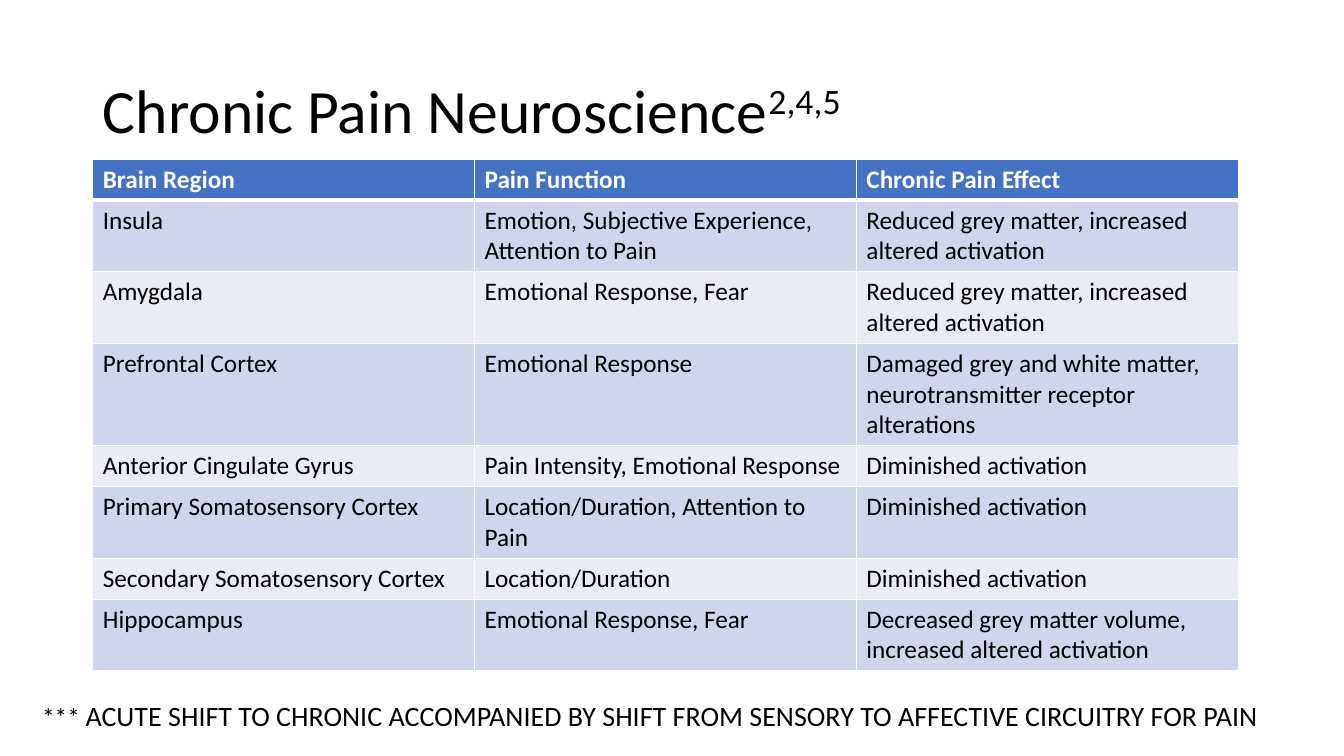
import pptx
import pptx.util
import pptx.dml.color
import pptx.enum.text
import pptx.oxml
import pptx.oxml.ns
from pptx.util import Inches

RGBColor = pptx.dml.color.RGBColor
BLACK = RGBColor(0x00, 0x00, 0x00)
WHITE = RGBColor(0xFF, 0xFF, 0xFF)
BLUE = RGBColor(0x44, 0x72, 0xC4)
BAND_DARK = RGBColor(0xCF, 0xD5, 0xEA)
BAND_LIGHT = RGBColor(0xE9, 0xEB, 0xF5)

ROWS = [
    ("Brain Region", "Pain Function", "Chronic Pain Effect"),
    ("Insula", "Emotion, Subjective Experience, Attention to Pain",
     "Reduced grey matter, increased altered activation"),
    ("Amygdala", "Emotional Response, Fear",
     "Reduced grey matter, increased altered activation"),
    ("Prefrontal Cortex", "Emotional Response",
     "Damaged grey and white matter, neurotransmitter receptor alterations"),
    ("Anterior Cingulate Gyrus", "Pain Intensity, Emotional Response",
     "Diminished activation"),
    ("Primary Somatosensory Cortex", "Location/Duration, Attention to Pain",
     "Diminished activation"),
    ("Secondary Somatosensory Cortex", "Location/Duration",
     "Diminished activation"),
    ("Hippocampus", "Emotional Response, Fear",
     "Decreased grey matter volume, increased altered activation"),
]
ROW_HEIGHTS = [0.38, 0.67, 0.67, 0.95, 0.38, 0.67, 0.38, 0.67]


class SlideBuilder:
    font = "Calibri"

    def __init__(self, prs):
        self.s = prs.slides.add_slide(prs.slide_layouts[5])

    def run(self, p, text, size, color=BLACK, bold=False):
        r = p.add_run()
        r.text = text
        r.font.color.rgb = color
        formats = {"name": self.font, "size": pptx.util.Pt(size), "bold": bold}
        for name, value in formats.items():
            setattr(r.font, name, value)
        return r

    def title(self, box, text, superscript, size):
        sp = self.s.shapes.title
        for name, value in zip(("left", "top", "width", "height"), box):
            setattr(sp, name, Inches(value))
        tf = sp.text_frame
        formats = {"word_wrap": True,
                   "auto_size": pptx.enum.text.MSO_AUTO_SIZE.NONE,
                   "vertical_anchor": pptx.enum.text.MSO_ANCHOR.MIDDLE}
        for name, value in formats.items():
            setattr(tf, name, value)
        p = tf.paragraphs[0]
        p.alignment = pptx.enum.text.PP_ALIGN.LEFT
        p.line_spacing = 0.9
        self.run(p, text, size)
        r = self.run(p, superscript, size)
        r.font._element.set("baseline", "30000")

    def text(self, box, runs):
        sp = self.s.shapes.add_textbox(*map(Inches, box))
        tf = sp.text_frame
        tf.word_wrap = True
        tf.auto_size = pptx.enum.text.MSO_AUTO_SIZE.SHAPE_TO_FIT_TEXT
        for text, size in runs:
            self.run(tf.paragraphs[0], text, size)

    def borders(self, cell, color, widths):
        tcPr = cell._tc.get_or_add_tcPr()
        for i, (side, width) in enumerate(widths.items()):
            # Border lines come before the fill in the cell properties
            tcPr.insert(i, pptx.oxml.parse_xml(
                f'<a:ln{side} {pptx.oxml.ns.nsdecls("a")} w="{pptx.util.Pt(width)}">'
                f'<a:solidFill><a:srgbClr val="{color}"/></a:solidFill></a:ln{side}>'))

    def table(self, box, rows, heights, size):
        table = self.s.shapes.add_table(
            len(rows), len(rows[0]), *map(Inches, box)).table
        for column in table.columns:
            column.width = Inches(box[2] / len(rows[0]))
        for i, (row, height) in enumerate(zip(rows, heights)):
            table.rows[i].height = Inches(height)
            header = i == 0
            fill = BLUE if header else BAND_DARK if i % 2 else BAND_LIGHT
            for j, text in enumerate(row):
                cell = table.cell(i, j)
                cell.fill.solid()
                cell.fill.fore_color.rgb = fill
                self.run(cell.text_frame.paragraphs[0], text, size,
                         WHITE if header else BLACK, header)
                self.borders(cell, WHITE, {"L": 1, "R": 1,
                                           "T": 3 if i == 1 else 1,
                                           "B": 3 if header else 1})


def main():
    prs = pptx.Presentation()
    prs.slide_width, prs.slide_height = Inches(13.33), Inches(7.5)
    slide = SlideBuilder(prs)

    # Title with reference numbers
    slide.title((0.92, 0.4, 11.5, 1.45), "Chronic Pain Neuroscience", "2,4,5", 44)

    # Brain regions
    slide.table((0.92, 1.58, 11.36, sum(ROW_HEIGHTS)), ROWS, ROW_HEIGHTS, 18)

    # Closing note
    slide.text((0.32, 6.88, 12.72, 0.44), [
        ("*** ", 18),
        ("ACUTE SHIFT TO CHRONIC ACCOMPANIED BY SHIFT FROM SENSORY "
         "TO AFFECTIVE CIRCUITRY FOR PAIN", 20)])

    prs.save("out.pptx")


if __name__ == "__main__":
    main()
